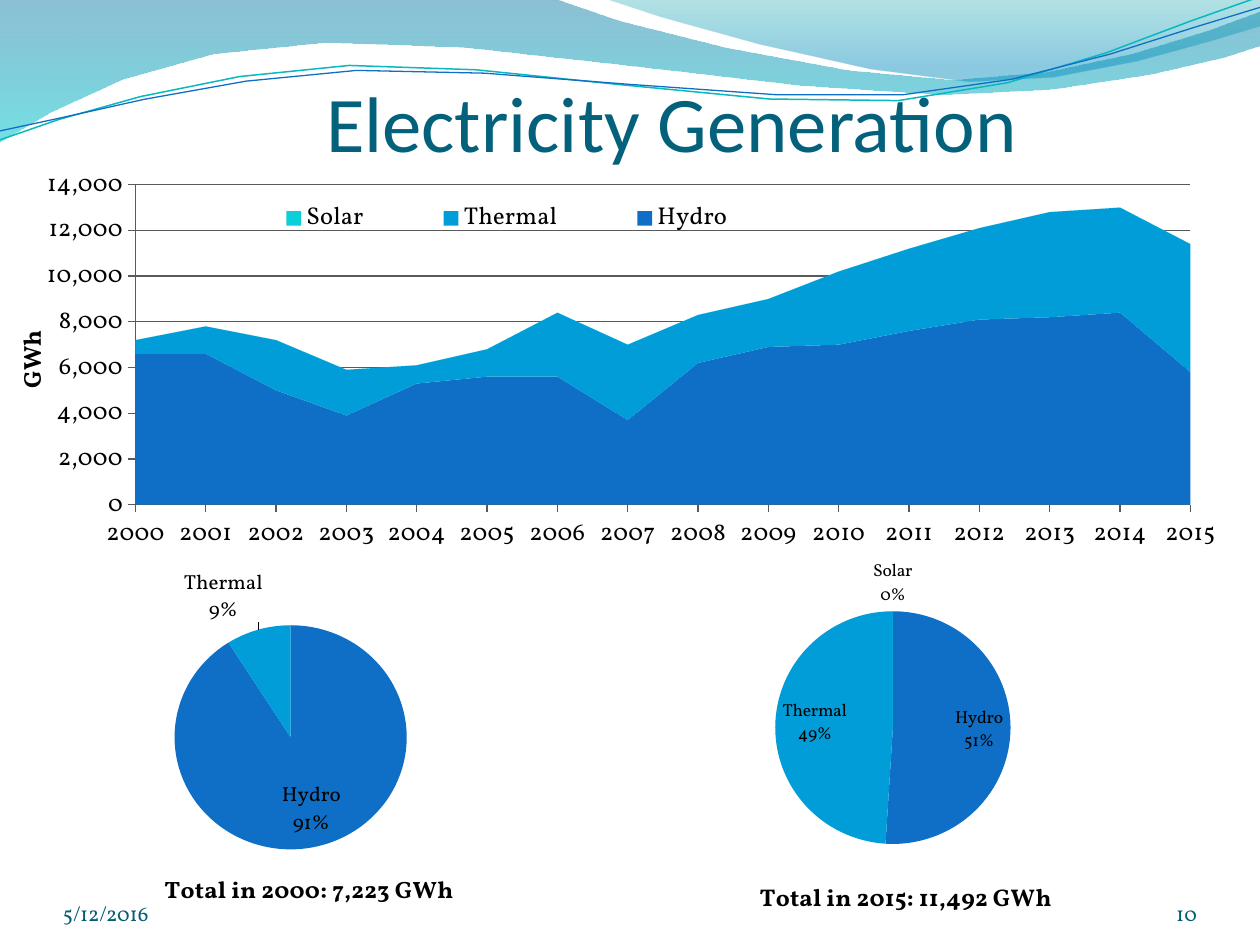
"""Build the electricity generation slide with an area chart and two pies."""
from lxml import etree
from pptx import Presentation
from pptx.chart.data import CategoryChartData
from pptx.dml.color import RGBColor
from pptx.enum.chart import XL_CHART_TYPE, XL_LABEL_POSITION, XL_LEGEND_POSITION, XL_TICK_MARK
from pptx.enum.text import MSO_ANCHOR, PP_ALIGN
from pptx.oxml.ns import qn
from pptx.util import Cm, Pt

AREA, PIE = XL_CHART_TYPE.AREA_STACKED, XL_CHART_TYPE.PIE
INSIDE, OUTSIDE = XL_LABEL_POSITION.INSIDE_END, XL_LABEL_POSITION.OUTSIDE_END
RIGHT_LEGEND, TICK_OUT = XL_LEGEND_POSITION.RIGHT, XL_TICK_MARK.OUTSIDE
BOTTOM = MSO_ANCHOR.BOTTOM
LEFT, CENTER, RIGHT = PP_ALIGN.LEFT, PP_ALIGN.CENTER, PP_ALIGN.RIGHT

BLACK = RGBColor(0x00, 0x00, 0x00)
GRAY = RGBColor(0x59, 0x59, 0x59)
TITLE_TEAL = RGBColor(0x04, 0x61, 0x7B)
FOOTER_TEAL = RGBColor(0x04, 0x5D, 0x75)
BLUE = RGBColor(0x0F, 0x6F, 0xC6)
SKY = RGBColor(0x00, 0x9D, 0xD9)
AQUA = RGBColor(0x0B, 0xD0, 0xD9)
LINE_TEAL = RGBColor(0x0A, 0xB8, 0xBF)
WAVE_BLUE = RGBColor(0x00, 0x74, 0xA1)
WAVE_AQUA = RGBColor(0x00, 0xC6, 0xCF)
CREST_TEAL = RGBColor(0x00, 0xA1, 0xA9)
CREST_BLUE = RGBColor(0x00, 0x8B, 0xBF)
SOURCE_COLORS = {"Hydro": BLUE, "Thermal": SKY, "Solar": AQUA}
BODY_FONT = "Vollkorn"
CURVE_STEPS = 4


def draw_wave(page, start, segments, closed):
    """Draw straight (2 numbers) and cubic (6 numbers) segments, in centimetres."""
    points = [start]
    for segment in segments:
        if len(segment) == 2:
            points.append(segment)
            continue
        x0, y0 = points[-1]
        x1, y1, x2, y2, x3, y3 = segment
        for step in range(1, CURVE_STEPS + 1):
            t = step / CURVE_STEPS
            a, b, c, d = (1 - t) ** 3, 3 * t * (1 - t) ** 2, 3 * t * t * (1 - t), t ** 3
            points.append((a * x0 + b * x1 + c * x2 + d * x3,
                           a * y0 + b * y1 + c * y2 + d * y3))
    corners = [(Cm(x), Cm(y)) for x, y in points]
    builder = page.shapes.build_freeform(*corners[0])
    builder.add_line_segments(corners[1:], close=closed)
    wave = builder.convert_to_shape()
    wave.shadow.inherit = False
    return wave


def set_layout(parent, index, **percents):
    """Give a chart part a manual layout in percent of the chart; labels get an offset."""
    for old in parent.findall(qn("c:layout")):
        parent.remove(old)
    layout = etree.Element(qn("c:layout"))
    manual = etree.SubElement(layout, qn("c:manualLayout"))
    if parent.tag == qn("c:plotArea"):
        etree.SubElement(manual, qn("c:layoutTarget")).set("val", "inner")
    if parent.tag != qn("c:dLbl"):
        for side in ("x", "y"):
            etree.SubElement(manual, qn(f"c:{side}Mode")).set("val", "edge")
    for side, percent in percents.items():
        etree.SubElement(manual, qn(f"c:{side}")).set("val", str(percent / 100))
    parent.insert(index, layout)


deck = Presentation()
deck.slide_width, deck.slide_height = Cm(25.4), Cm(19.05)
page = deck.slides.add_slide(deck.slide_layouts[5])
title = page.shapes.title

ribbons = [
    ((0, 0), [(11.18, -0.03), (12.09, 0.43, 16.87, 1.6, 19.25, 1.6),
              (21.67, 1.6, 24.33, 0.66, 25.4, 0.23), (25.43, 0.91),
              (24.97, 1.12, 22.1, 1.93, 18.95, 1.91), (15.8, 1.91, 9.7, 0.71, 6.53, 0.86),
              (3.28, 0.91, 1.17, 2.11, -0.03, 2.87)],
     [(0, WAVE_BLUE, 45), (1, WAVE_AQUA, 55)]),
    ((12.17, -0.03), [(12.93, 0.28, 17.32, 1.57, 19.53, 1.65),
                      (21.74, 1.75, 24.41, 0.81, 25.4, 0.53), (25.4, 0)],
     [(0, CREST_TEAL, 30), (0.8, CREST_BLUE, 45)]),
]
for start, segments, stops in ribbons:
    ribbon = draw_wave(page, start, segments, True)
    ribbon.line.fill.background()
    ribbon.fill.gradient()
    ribbon.fill.gradient_angle = 270
    for stop, (position, color, _) in zip(ribbon.fill.gradient_stops, stops):
        stop.position = position
        stop.color.rgb = color
    for tint, (_, _, opacity) in zip(ribbon._element.xpath(".//a:gs/a:srgbClr"), stops):
        etree.SubElement(tint, qn("a:alpha")).set("val", str(opacity * 1000))
    title._element.addprevious(ribbon._element)

strands = [
    ((0, 2.82), [(1.22, 2.36, 4.01, 1.45, 7.04, 1.32), (10.03, 1.19, 15.06, 2.26, 18.11, 2.03),
                 (21.16, 1.8, 23.83, 0.38, 25.35, -0.05)], LINE_TEAL, 0.85),
    ((0, 2.64), [(1.19, 2.44, 4.17, 1.55, 7.19, 1.42), (10.24, 1.3, 15.16, 2.13, 18.21, 1.91),
                 (21.23, 1.7, 23.9, 0.53, 25.4, 0.15)], BLUE, 0.75),
]
for start, segments, color, width in strands:
    strand = draw_wave(page, start, segments, False)
    strand.fill.background()
    strand.line.color.rgb = color
    strand.line.width = Pt(width)
    title._element.addprevious(strand._element)

title.left, title.top, title.width, title.height = Cm(2.11), Cm(1.28), Cm(22.86), Cm(2.11)
date_box = page.shapes.add_textbox(Cm(1.27), Cm(17.65), Cm(5.92), Cm(1.02))
number_box = page.shapes.add_textbox(Cm(22.02), Cm(17.65), Cm(2.11), Cm(1.02))
for box, words, align, size, font, color in [
    (title, "Electricity Generation", CENTER, 45, "Calibri", TITLE_TEAL),
    (date_box, "5/12/2016", LEFT, 12, BODY_FONT, FOOTER_TEAL),
    (number_box, "10", RIGHT, 12, BODY_FONT, FOOTER_TEAL),
]:
    frame = box.text_frame
    frame.word_wrap = True
    frame.vertical_anchor = BOTTOM
    frame.margin_left = frame.margin_right = frame.margin_bottom = 0
    frame.margin_top = Cm(0.13) if box is title else 0
    para = frame.paragraphs[0]
    para.alignment = align
    span = para.add_run()
    span.text = words
    span.font.size, span.font.name, span.font.color.rgb = Pt(size), font, color

yearly = CategoryChartData(number_format="#,##0")
yearly.categories = [str(year) for year in range(2000, 2016)]
yearly.add_series("Hydro", [6600, 6600, 5000, 3900, 5300, 5600, 5600, 3700,
                            6200, 6900, 7000, 7600, 8100, 8200, 8400, 5800])
yearly.add_series("Thermal", [600, 1200, 2200, 2000, 800, 1200, 2800, 3300,
                              2100, 2100, 3200, 3600, 4000, 4600, 4600, 5600])
yearly.add_series("Solar", [0] * 16)
chart = page.shapes.add_chart(AREA, Cm(0.2), Cm(3.38), Cm(24.56), Cm(9.09), yearly).chart
chart.has_title = False
chart.font.size, chart.font.name, chart.font.color.rgb = Pt(14), BODY_FONT, BLACK
for series in chart.plots[0].series:
    series.format.fill.solid()
    series.format.fill.fore_color.rgb = SOURCE_COLORS[series.name]
for axis in (chart.category_axis, chart.value_axis):
    axis.major_tick_mark = TICK_OUT
    axis.format.line.color.rgb = GRAY
chart.category_axis.has_major_gridlines = False
scale = chart.value_axis
scale.minimum_scale, scale.maximum_scale, scale.major_unit = 0, 14000, 2000
scale.has_major_gridlines = True
scale.major_gridlines.format.line.color.rgb = GRAY
scale.tick_labels.number_format = "#,##0"
scale.tick_labels.number_format_is_linked = False
span = scale.axis_title.text_frame.paragraphs[0].add_run()
span.text = "GWh"
span.font.size, span.font.bold, span.font.name = Pt(14), True, BODY_FONT
for crossing in chart._chartSpace.xpath(".//c:valAx/c:crossBetween"):
    crossing.set("val", "midCat")
chart.has_legend = True
chart.legend.position = RIGHT_LEGEND
chart.legend.include_in_layout = False
set_layout(chart.legend._element, 1, x=16.8, y=6.5, w=48, h=9)
set_layout(chart._chartSpace.chart.plotArea, 0, x=10.3, y=3.5, w=86.6, h=71.2)

pies = [
    ((1.7, 11.43, 8.38, 7.04), "Total in 2000: 7,223 GWh", (91, 9, 0), 12,
     ((INSIDE, 4.8), (OUTSIDE, 1.6)), (18.2, 88.7), (21.2, 16.4, 56.9, 66.5)),
    ((12.07, 11.23, 11.86, 7.42), "Total in 2015: 11,492 GWh", (51, 49, 0.01), 10,
     ((INSIDE, 0), (INSIDE, 0), (OUTSIDE, 0)), (26.6, 86.6), (30, 12.4, 40, 66.7)),
]
for bounds, caption, shares, size, labels, (title_x, title_y), (x, y, w, h) in pies:
    mix = CategoryChartData(number_format="#,##0")
    mix.categories = list(SOURCE_COLORS)
    mix.add_series("Series 1", shares)
    chart = page.shapes.add_chart(PIE, *map(Cm, bounds), mix).chart
    chart.has_legend = False
    chart.font.size, chart.font.name, chart.font.color.rgb = Pt(size), BODY_FONT, BLACK
    span = chart.chart_title.text_frame.paragraphs[0].add_run()
    span.text = caption
    span.font.size, span.font.bold, span.font.name = Pt(14), True, BODY_FONT
    span.font.color.rgb = BLACK
    set_layout(chart.chart_title._element, 1, x=title_x, y=title_y)
    set_layout(chart._chartSpace.chart.plotArea, 0, x=x, y=y, w=w, h=h)
    chart.plots[0].vary_by_categories = True
    series = chart.plots[0].series[0]
    for index, color in enumerate(SOURCE_COLORS.values()):
        slice_fill = series.points[index].format.fill
        slice_fill.solid()
        slice_fill.fore_color.rgb = color
    for index, (position, _) in enumerate(labels):
        series.points[index].data_label.position = position
    for label, (_, shift) in zip(series._element.xpath("c:dLbls/c:dLbl"), labels):
        for flag, shown in (("c:showVal", "0"), ("c:showCatName", "1"), ("c:showPercent", "1")):
            label.find(qn(flag)).set("val", shown)
        etree.SubElement(label, qn("c:separator")).text = "\n"
        if shift:
            set_layout(label, 1, x=shift, y=0)

deck.save("out.pptx")
